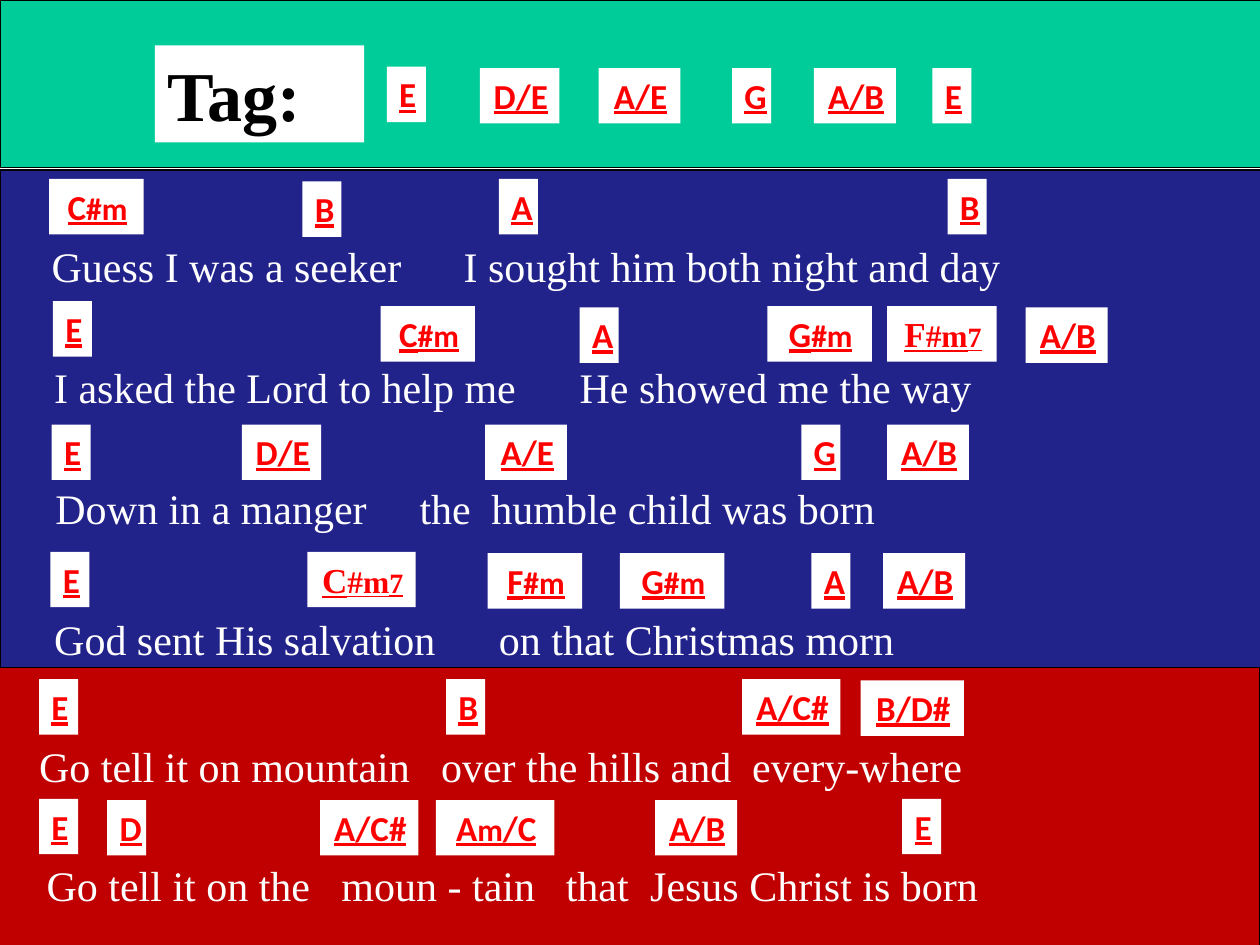
import pptx
import pptx.util
import pptx.dml.color
import pptx.enum.shapes
import pptx.enum.text
import pptx.oxml.ns
import lxml.etree

COLORS = {"white": "FFFFFF", "black": "000000", "red": "FF0000",
          "green": "00CC99", "navy": "22228B", "crimson": "C00000"}
SERIF, SANS = "Times New Roman", "Calibri"
CHORD_HEIGHT, LYRIC_HEIGHT, LYRIC_WIDTH = 0.44, 0.5, 10.02

BANDS = [("navy", 0, 1.35, 10.02, 4.01), ("green", 0, 0, 10.02, 1.33),
         ("crimson", -0.02, 5.3, 10.02, 2.24)]

CHORD_WIDTHS = {"D/E": 0.63, "A/E": 0.65, "A/B": 0.65, "A/C#": 0.78, "B/D#": 0.82,
                "C#m": 0.75, "F#m": 0.75, "G#m": 0.83, "C#m7": 0.86, "F#m7": 0.87,
                "Am/C": 0.94}
SINGLE_WIDTH = 0.31
SMALL_PARTS = {"#m7": [("#m", 18), ("7", 16)], "#m": [("#m", 18)],
               "m/C": [("m", 18), ("/C", 20)]}

CHORD_ROWS = [
    (0.54, [("E", 3.07, -0.01), ("D/E", 3.81), ("A/E", 4.75), ("G", 5.81),
            ("A/B", 6.46), ("E", 7.4)]),
    (1.42, [("C#m", 0.39), ("B", 2.4, 0.02), ("A", 3.96), ("B", 7.52)]),
    (2.43, [("E", 0.42, -0.04), ("C#m", 3.02), ("A", 4.6, 0.01), ("G#m", 6.09),
            ("F#m7", 7.04), ("A/B", 8.14, 0.01)]),
    (3.37, [("E", 0.41), ("D/E", 1.92), ("A/E", 3.85), ("G", 6.36), ("A/B", 7.04)]),
    (4.39, [("E", 0.4, -0.01), ("C#m7", 2.44, -0.01), ("F#m", 3.87), ("G#m", 4.92),
            ("A", 6.44), ("A/B", 7.01)]),
    (5.39, [("E", 0.31), ("B", 3.54), ("A/C#", 5.89), ("B/D#", 6.83, 0.01)]),
    (6.35, [("E", 0.31, -0.01), ("D", 0.85), ("A/C#", 2.54), ("Am/C", 3.46),
            ("A/B", 5.2), ("E", 7.16, -0.01)]),
]

LYRICS = [
    (-0.02, 1.86, [(0.41, "Guess I was a seeker"),
                   (3.68, "I sought him both night and day")]),
    (0, 2.82, [(0.43, "I asked the Lord to help me"), (4.6, "He showed me the way")]),
    (0.01, 3.78, [(0.44, "Down in a manger"), (3.33, "the"),
                  (3.9, "humble child was born")]),
    (0, 4.82, [(0.43, "God sent His salvation"), (3.96, "on that Christmas morn")]),
    (0.04, 5.83, [(0.31, "Go tell it on mountain"), (3.5, "over the hills and"),
                  (5.97, "every-where")]),
    (0.02, 6.77, [(0.37, "Go tell it on the"), (2.71, "moun - tain"), (4.49, "that"),
                  (5.16, "Jesus Christ is born")]),
]


def color(name):
    return pptx.dml.color.RGBColor.from_string(COLORS[name])


def add_block(page, left, top, width, height, fill, outline=None):
    box = page.shapes.add_shape(
        pptx.enum.shapes.MSO_SHAPE.RECTANGLE,
        *(pptx.util.Inches(length) for length in (left, top, width, height)))
    box.shadow.inherit = False
    box.fill.solid()
    box.fill.fore_color.rgb = color(fill)
    if outline:
        box.line.color.rgb = color(outline)
        box.line.width = pptx.util.Pt(0.75)
    else:
        box.line.fill.background()
    return box


def write_text(box, parts, font=SERIF, ink="white", bold=False, underline=False,
               centered=False, inset_left=0.1, inset_right=0.1, tabs=()):
    frame = box.text_frame
    frame.word_wrap = True
    frame.auto_size = pptx.enum.text.MSO_AUTO_SIZE.SHAPE_TO_FIT_TEXT
    frame.vertical_anchor = pptx.enum.text.MSO_ANCHOR.TOP
    frame.margin_left = pptx.util.Inches(inset_left)
    frame.margin_right = pptx.util.Inches(inset_right)
    para = frame.paragraphs[0]
    align = pptx.enum.text.PP_ALIGN
    para.alignment = align.CENTER if centered else align.LEFT
    qn = pptx.oxml.ns.qn
    properties = para._p.get_or_add_pPr()
    spacing = lxml.etree.SubElement(properties, qn("a:spcBef"))
    lxml.etree.SubElement(spacing, qn("a:spcPct"), val="50000")
    if tabs:
        stops = lxml.etree.SubElement(properties, qn("a:tabLst"))
        for position in tabs:
            lxml.etree.SubElement(stops, qn("a:tab"), algn="l",
                                  pos=str(int(pptx.util.Inches(position))))
    for text, size in parts:
        span = para.add_run()
        span.text = text
        span.font.name = font
        span.font.size = pptx.util.Pt(size)
        span.font.bold = bold
        span.font.underline = underline
        span.font.color.rgb = color(ink)


def add_chord(page, top, name, left, shift=0):
    width = CHORD_WIDTHS.get(name, SINGLE_WIDTH)
    box = add_block(page, left, top + shift, width, CHORD_HEIGHT, "white")
    small = SMALL_PARTS.get(name[1:])
    parts = [(name[0], 20)] + small if small else [(name, 20)]
    write_text(box, parts, font=SERIF if name.endswith("7") else SANS, ink="red",
               bold=True, underline=True, centered=True, inset_right=0.08)


def add_lyric(page, left, top, phrases):
    box = page.shapes.add_textbox(
        *(pptx.util.Inches(length) for length in (left, top, LYRIC_WIDTH, LYRIC_HEIGHT)))
    start = phrases[0][0]
    write_text(box, [("\t".join(phrase for _, phrase in phrases), 24)],
               inset_left=start - left, tabs=[x - start for x, _ in phrases[1:]])


def main():
    deck = pptx.Presentation()
    deck.slide_width = pptx.util.Inches(10)
    deck.slide_height = pptx.util.Inches(7.5)
    page = deck.slides.add_slide(deck.slide_layouts[6])
    for fill, *place in BANDS:
        add_block(page, *place, fill, outline="black")
    title = add_block(page, 1.23, 0.36, 1.66, 0.77, "white")
    write_text(title, [("Tag:", 40)], ink="black", bold=True)
    for lyric in LYRICS:
        add_lyric(page, *lyric)
    for top, chords in CHORD_ROWS:
        for chord in chords:
            add_chord(page, top, *chord)
    deck.save("out.pptx")


if __name__ == "__main__":
    main()
